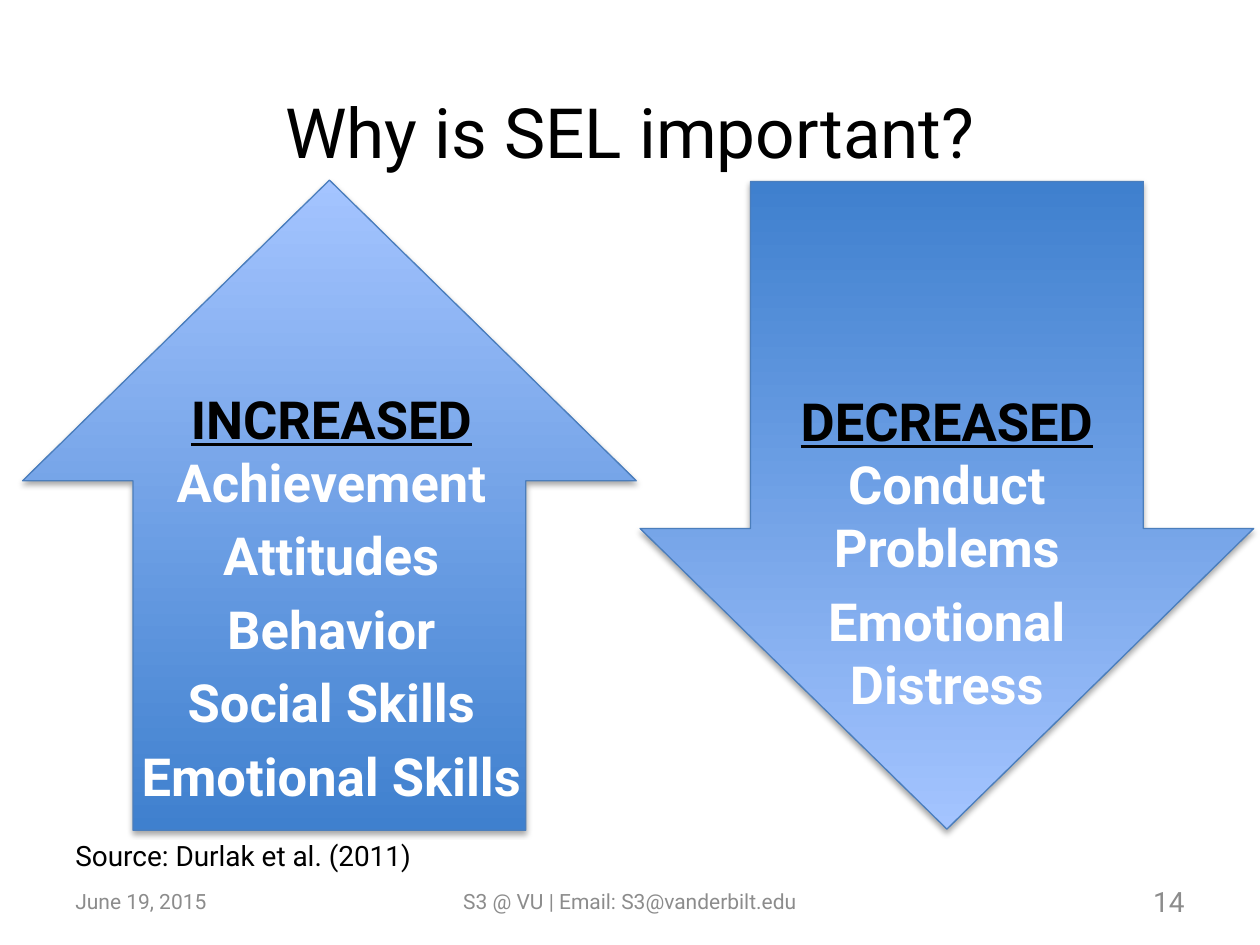
import lxml.etree
import pptx
import pptx.dml.color
import pptx.enum.shapes
import pptx.enum.text
import pptx.oxml.ns
import pptx.util

BLACK = pptx.dml.color.RGBColor(0x00, 0x00, 0x00)
WHITE = pptx.dml.color.RGBColor(0xFF, 0xFF, 0xFF)
GREY = pptx.dml.color.RGBColor(0x8C, 0x8C, 0x8C)
DEEP_BLUE = pptx.dml.color.RGBColor(0x3F, 0x80, 0xCE)
PALE_BLUE = pptx.dml.color.RGBColor(0xA4, 0xC4, 0xFF)
EDGE_BLUE = pptx.dml.color.RGBColor(0x4B, 0x7E, 0xBC)

SLIDE_WIDTH = pptx.util.Inches(10)
SLIDE_HEIGHT = pptx.util.Inches(7.5)
COLUMNS, ROWS = 100, 75
SHADOW = {"blurRad": "40000", "dist": "23000", "dir": "5400000", "rotWithShape": "0"}
HEADING = {"size": pptx.util.Pt(30), "bold": True, "underline": True}
OUTCOME = {**HEADING, "underline": False}
ALIGN = pptx.enum.text.PP_ALIGN
ANCHOR = pptx.enum.text.MSO_ANCHOR


def place(box):
    """Turn a box in grid columns and rows into slide lengths."""
    left, top, width, height = box
    column, row = SLIDE_WIDTH / COLUMNS, SLIDE_HEIGHT / ROWS
    return [round(n) for n in (left * column, top * row, width * column, height * row)]


def add_words(paragraph, words, color, formats):
    """Add one run with the given colour and font formats."""
    run = paragraph.add_run()
    run.text = words
    run.font.name = "Roboto"
    run.font.color.rgb = color
    for name, value in formats.items():
        setattr(run.font, name, value)


def add_frame(slide, box, anchor):
    """Add a wrapping text box and return its text frame."""
    frame = slide.shapes.add_textbox(*place(box)).text_frame
    for name, value in {"word_wrap": True, "vertical_anchor": anchor}.items():
        setattr(frame, name, value)
    return frame


def add_line(slide, box, words, size, color, align, anchor=ANCHOR.MIDDLE):
    """Add a single line of text in its box."""
    paragraph = add_frame(slide, box, anchor).paragraphs[0]
    paragraph.alignment = align
    add_words(paragraph, words, color, {"size": pptx.util.Pt(size)})


def add_arrow(slide, box, rotation):
    """Add a shaded block arrow turned by the given angle."""
    arrow = slide.shapes.add_shape(pptx.enum.shapes.MSO_SHAPE.UP_ARROW, *place(box))
    arrow.rotation = rotation
    arrow.adjustments[0], arrow.adjustments[1] = 0.64, 0.49
    arrow.fill.gradient()
    arrow.fill.gradient_angle = 90
    for stop, color in zip(arrow.fill.gradient_stops, (DEEP_BLUE, PALE_BLUE)):
        stop.color.rgb = color
    arrow.line.color.rgb = EDGE_BLUE
    arrow.line.width = pptx.util.Pt(0.75)
    arrow.shadow.inherit = False
    qn = pptx.oxml.ns.qn
    effects = arrow._element.spPr.find(qn("a:effectLst"))
    shadow = lxml.etree.SubElement(effects, qn("a:outerShdw"), SHADOW)
    shade = lxml.etree.SubElement(shadow, qn("a:srgbClr"), {"val": str(BLACK)})
    lxml.etree.SubElement(shade, qn("a:alpha"), {"val": "35000"})


def add_outcomes(slide, box, heading, outcomes):
    """Add an underlined heading followed by its outcomes."""
    frame = add_frame(slide, box, ANCHOR.TOP)
    for index, outcome in enumerate(outcomes):
        if index:
            paragraph = frame.add_paragraph()
            paragraph.space_before = pptx.util.Pt(6)
        else:
            paragraph = frame.paragraphs[0]
            add_words(paragraph, heading, BLACK, HEADING)
            outcome = " " + outcome
        paragraph.alignment = ALIGN.CENTER
        add_words(paragraph, outcome, WHITE, OUTCOME)


def add_footer(slide, box):
    """Add the date, contact and page number along the footer box."""
    left, top, width, height = box
    side = 23.3
    contact = 31.7
    parts = (
        (left, side, "June 19, 2015", 12, ALIGN.LEFT),
        (left + (width - contact) / 2, contact,
         "S3 @ VU | Email: S3@vanderbilt.edu", 12, ALIGN.CENTER),
        (left + width - side, side, "14", 16, ALIGN.RIGHT),
    )
    for start, span, words, size, align in parts:
        add_line(slide, (start, top, span, height), words, size, GREY, align)


def main():
    """Build and save the slide."""
    deck = pptx.Presentation()
    deck.slide_width, deck.slide_height = SLIDE_WIDTH, SLIDE_HEIGHT
    slide = deck.slides.add_slide(deck.slide_layouts[6])
    add_arrow(slide, (50.8, 14.4, 48.7, 51.4), 180)
    add_arrow(slide, (1.8, 14.3, 48.7, 51.6), 0)
    add_footer(slide, (5, 69.5, 90, 4))
    add_line(slide, (7.5, 6.3, 85, 8.2), "Why is SEL important?", 39.6, BLACK, ALIGN.CENTER)
    add_outcomes(slide, (9.4, 30.2, 33.8, 37.2), "INCREASED",
                 ("Achievement", "Attitudes", "Behavior", "Social Skills", "Emotional Skills"))
    add_outcomes(slide, (59.4, 30.4, 31.5, 37.2), "DECREASED",
                 ("Conduct Problems", "Emotional Distress"))
    add_line(slide, (5, 66.1, 31.6, 3.7), "Source: Durlak et al. (2011)", 16, BLACK,
             ALIGN.LEFT, ANCHOR.TOP)
    deck.save("out.pptx")


if __name__ == "__main__":
    main()
